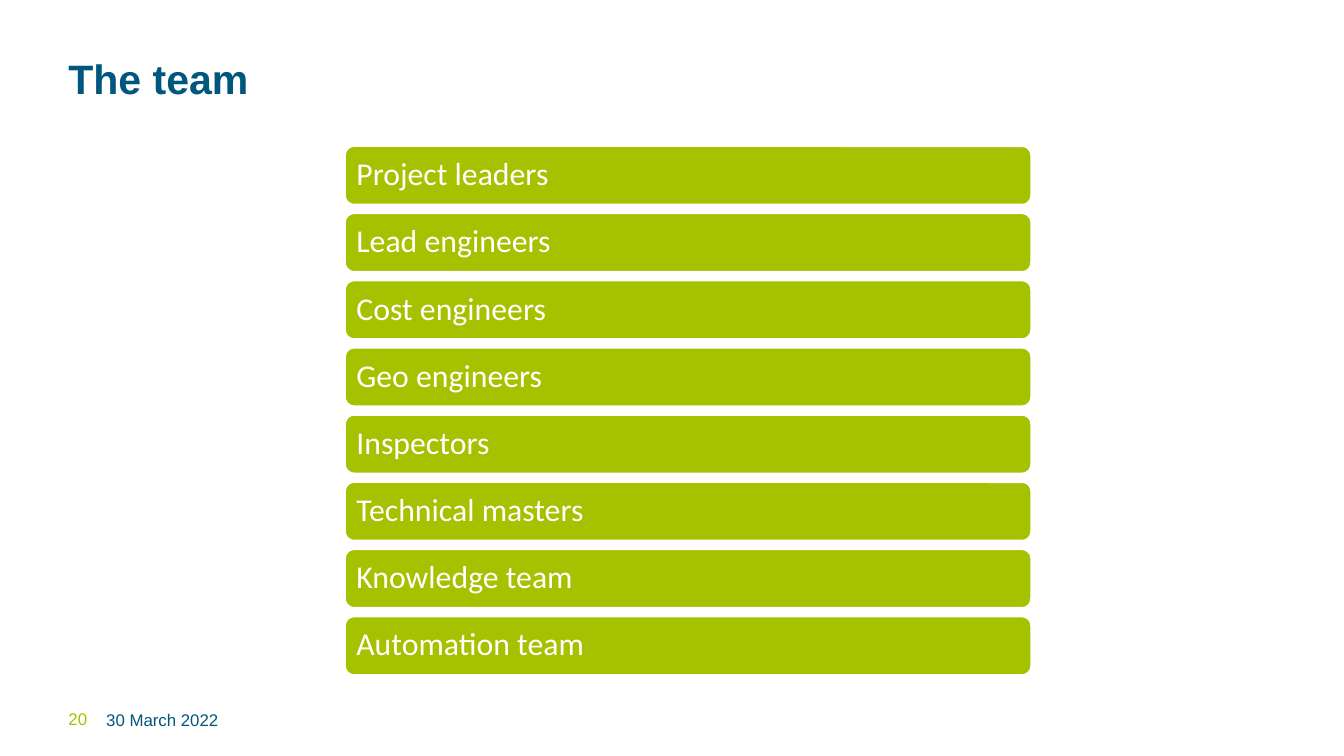
from dataclasses import dataclass

from pptx import Presentation
from pptx.dml.color import RGBColor
from pptx.enum.shapes import MSO_SHAPE as Shape
from pptx.enum.text import MSO_ANCHOR as Anchor, PP_ALIGN as Align
from pptx.util import Inches, Pt

BLUE = RGBColor(0x00, 0x57, 0x7E)
GREEN = RGBColor(0xA5, 0xC1, 0x00)
WHITE = RGBColor(0xFF, 0xFF, 0xFF)

SLIDE_W = 10
SLIDE_H = SLIDE_W * 9 / 16
MARGIN = 0.51
FOOTER_TOP, FOOTER_H = 5.28, 0.15

# One column of bars, one row per role
BAR_LEFT, BAR_TOP, BAR_W, BAR_H = 2.56, 1.08, 5.12, 0.45
ROW_PITCH = 0.5
ROLES = (
    "Project leaders",
    "Lead engineers",
    "Cost engineers",
    "Geo engineers",
    "Inspectors",
    "Technical masters",
    "Knowledge team",
    "Automation team",
)


@dataclass(frozen=True)
class Style:
    font: str
    size: float
    color: RGBColor
    bold: bool = False
    inset_x: float = 0
    inset_y: float = 0
    line_spacing: float = 0.9


@dataclass(frozen=True)
class Label:
    text: str
    left: float
    top: float
    width: float
    height: float
    style: Style


TITLE = Style("Arial", 22, BLUE, bold=True, inset_y=0.05)
DATE = Style("Arial", 9, BLUE, line_spacing=1)
NUMBER = Style("Arial", 9, GREEN)
ROLE = Style("Calibri", 17, WHITE, inset_x=0.07, inset_y=0.07)

LABELS = (
    Label("30 March 2022", 0.79, FOOTER_TOP, 4.72, FOOTER_H, DATE),
    Label("The team", MARGIN, 0.38, 8.94, 0.45, TITLE),
    Label("20", MARGIN, FOOTER_TOP, 0.2, FOOTER_H, NUMBER),
)


def write(sp, text: str, style: Style) -> None:
    tf = sp.text_frame
    tf.text = text
    tf.word_wrap = True
    tf.vertical_anchor = Anchor.MIDDLE
    tf.margin_left = tf.margin_right = Inches(style.inset_x)
    tf.margin_top = tf.margin_bottom = Inches(style.inset_y)
    p = tf.paragraphs[0]
    p.alignment = Align.LEFT
    p.line_spacing = style.line_spacing
    font = p.runs[0].font
    font.name = style.font
    font.size = Pt(style.size)
    font.bold = style.bold
    font.color.rgb = style.color


def add_label(s, label: Label) -> None:
    box = map(Inches, (label.left, label.top, label.width, label.height))
    write(s.shapes.add_textbox(*box), label.text, label.style)


def add_role_bar(s, row: int, role: str) -> None:
    box = map(Inches, (BAR_LEFT, BAR_TOP + row * ROW_PITCH, BAR_W, BAR_H))
    sp = s.shapes.add_shape(Shape.ROUNDED_RECTANGLE, *box)
    sp.shadow.inherit = False
    sp.fill.solid()
    sp.fill.fore_color.rgb = GREEN
    sp.line.color.rgb = WHITE
    sp.line.width = Pt(2)
    write(sp, role, ROLE)


def main() -> None:
    prs = Presentation()
    prs.slide_width, prs.slide_height = Inches(SLIDE_W), Inches(SLIDE_H)
    s = prs.slides.add_slide(prs.slide_layouts[6])
    for label in LABELS:
        add_label(s, label)
    for row, role in enumerate(ROLES):
        add_role_bar(s, row, role)
    prs.save("out.pptx")


if __name__ == "__main__":
    main()
